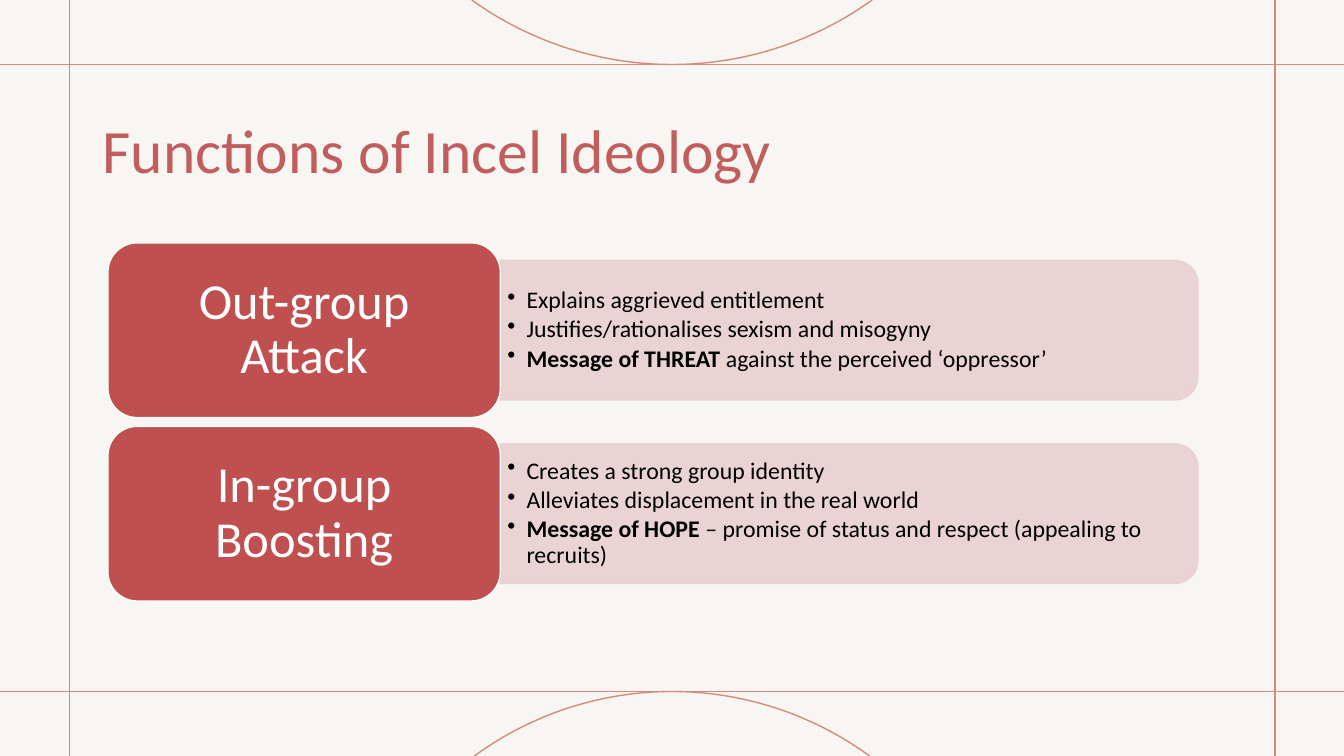
import math
import pptx
import pptx.util
from lxml import etree
from pptx.dml.color import RGBColor
from pptx.enum.shapes import MSO_CONNECTOR, MSO_SHAPE
from pptx.enum.text import MSO_ANCHOR, PP_ALIGN
from pptx.oxml.ns import qn

CREAM = RGBColor(0xF8, 0xF6, 0xF2)
CORAL = RGBColor(0xD8, 0x89, 0x7E)
ROSE = RGBColor(0xC2, 0x5D, 0x5D)
RED = RGBColor(0xC0, 0x50, 0x50)
PINK = RGBColor(0xE8, 0xD0, 0xD0)
WHITE = RGBColor(0xFF, 0xFF, 0xFF)
BLACK = RGBColor(0, 0, 0)

deck = pptx.Presentation()
deck.slide_width = pptx.util.Inches(13.33)
deck.slide_height = pptx.util.Inches(7.5)
# The slide is a grid of 100 columns by 100 rows
COL = deck.slide_width / 100
ROW = deck.slide_height / 100

TITLE = "Functions of Incel Ideology"
GROUPS = [
    ("Out-group Attack", [
        [("Explains aggrieved entitlement", False)],
        [("Justifies/rationalises sexism and misogyny", False)],
        [("Message of THREAT ", True),
         ("against the perceived ‘oppressor’", False)]]),
    ("In-group Boosting", [
        [("Creates a strong group identity", False)],
        [("Alleviates displacement in the real world", False)],
        [("Message of HOPE ", True),
         ("– promise of status and respect (appealing to recruits)", False)]]),
]


def emu(left, top, width, height):
    return [round(v) for v in (left * COL, top * ROW, width * COL, height * ROW)]


def write(shape, paras, size, color, align=PP_ALIGN.LEFT, inset=(0.1, 0.05),
          after=0, bullet=False):
    """Fill a shape with paragraphs, each a list of (text, bold) runs."""
    frame = shape.text_frame
    frame.word_wrap = True
    frame.vertical_anchor = MSO_ANCHOR.MIDDLE
    frame.margin_left = frame.margin_right = pptx.util.Inches(inset[0])
    frame.margin_top = frame.margin_bottom = pptx.util.Inches(inset[1])
    for i, runs in enumerate(paras):
        para = frame.add_paragraph() if i else frame.paragraphs[0]
        para.alignment = align
        para.line_spacing = 0.9
        para.space_after = pptx.util.Pt(after)
        for text, bold in runs:
            run = para.add_run()
            run.text = text
            run.font.name = "Calibri"
            run.font.size = pptx.util.Pt(size)
            run.font.bold = bold
            run.font.color.rgb = color
        if bullet:
            props = para._p.get_or_add_pPr()
            indent = pptx.util.Inches(0.19)
            props.set("marL", str(indent))
            props.set("indent", str(-indent))
            etree.SubElement(props, qn("a:buChar")).set("char", "•")


def paint(shape, fill, line):
    shape.shadow.inherit = False
    shape.fill.solid()
    shape.fill.fore_color.rgb = fill
    shape.line.color.rgb = line
    shape.line.width = pptx.util.Pt(1)


def rule(slide, *ends):
    line = slide.shapes.add_connector(MSO_CONNECTOR.STRAIGHT, *emu(*ends))
    line.line.color.rgb = CORAL
    line.line.width = pptx.util.Pt(1)
    etree.SubElement(line._element.spPr, qn("a:effectLst"))


def arc(slide, edge, tip, half):
    """Circle segment that meets the slide edge and peaks at row tip."""
    mid, half = 50 * COL, half * COL
    rise = abs(tip - edge) * ROW
    side = math.copysign(1, tip - edge)
    radius = (half ** 2 + rise ** 2) / (2 * rise)
    steps = 60
    points = []
    for i in range(steps + 1):
        away = half * (2 * i / steps - 1)
        drop = radius - math.sqrt(radius ** 2 - away ** 2)
        points.append((round(mid + away), round(tip * ROW - side * drop)))
    pen = slide.shapes.build_freeform(*points[0], scale=1.0)
    pen.add_line_segments(points[1:], close=False)
    curve = pen.convert_to_shape()
    curve.shadow.inherit = False
    curve.fill.background()
    curve.line.color.rgb = CORAL
    curve.line.width = pptx.util.Pt(1)


def frame(slide, left, top, right, low):
    """Background, crossing rules and the two arcs."""
    slide.background.fill.solid()
    slide.background.fill.fore_color.rgb = CREAM
    for y in (low, top):
        rule(slide, 0, y, 100, y)
    for x in (right, left):
        rule(slide, x, 100, x, 0)
    arc(slide, 0, top, 14.9)
    arc(slide, 100, low, 14.7)


def heading(slide, *box):
    write(slide.shapes.add_textbox(*emu(*box)), [[(TITLE, False)]], 44, ROSE)


def group(slide, name, points, left, top, width, height):
    """A red card with a pink panel of bullets to its right."""
    card = 0.36 * width
    deep = 0.8 * height
    x, y, w, h = emu(left + card, top + (height - deep) / 2, width - card, deep)

    # Panel: an upright tab turned a quarter about its centre
    tab = slide.shapes.add_shape(MSO_SHAPE.ROUND_2_SAME_RECTANGLE,
                                 x + (w - h) // 2, y + (h - w) // 2, h, w)
    tab.rotation = 90
    paint(tab, PINK, PINK)
    for tint in tab._element.spPr.iter(qn("a:srgbClr")):
        etree.SubElement(tint, qn("a:alpha")).set("val", "90000")
    note = slide.shapes.add_textbox(x, y, round(0.99 * w), h)
    write(note, points, 17, BLACK, inset=(0.07, 0.04), after=2.5, bullet=True)

    # Card
    block = slide.shapes.add_shape(MSO_SHAPE.ROUNDED_RECTANGLE,
                                   *emu(left, top, card, height))
    paint(block, RED, WHITE)
    write(block, [[(name, False)]], 36, WHITE, PP_ALIGN.CENTER, (0.15, 0.07))


def main():
    slide = deck.slides.add_slide(deck.slide_layouts[6])
    frame(slide, 5.17, 8.53, 94.88, 91.47)
    heading(slide, 6.9, 10.67, 86.25, 19.33)
    for i, (name, points) in enumerate(GROUPS):
        group(slide, name, points, 8.03, 32.13 + 24.27 * i, 81.1, 23.1)
    deck.save("out.pptx")


if __name__ == "__main__":
    main()
